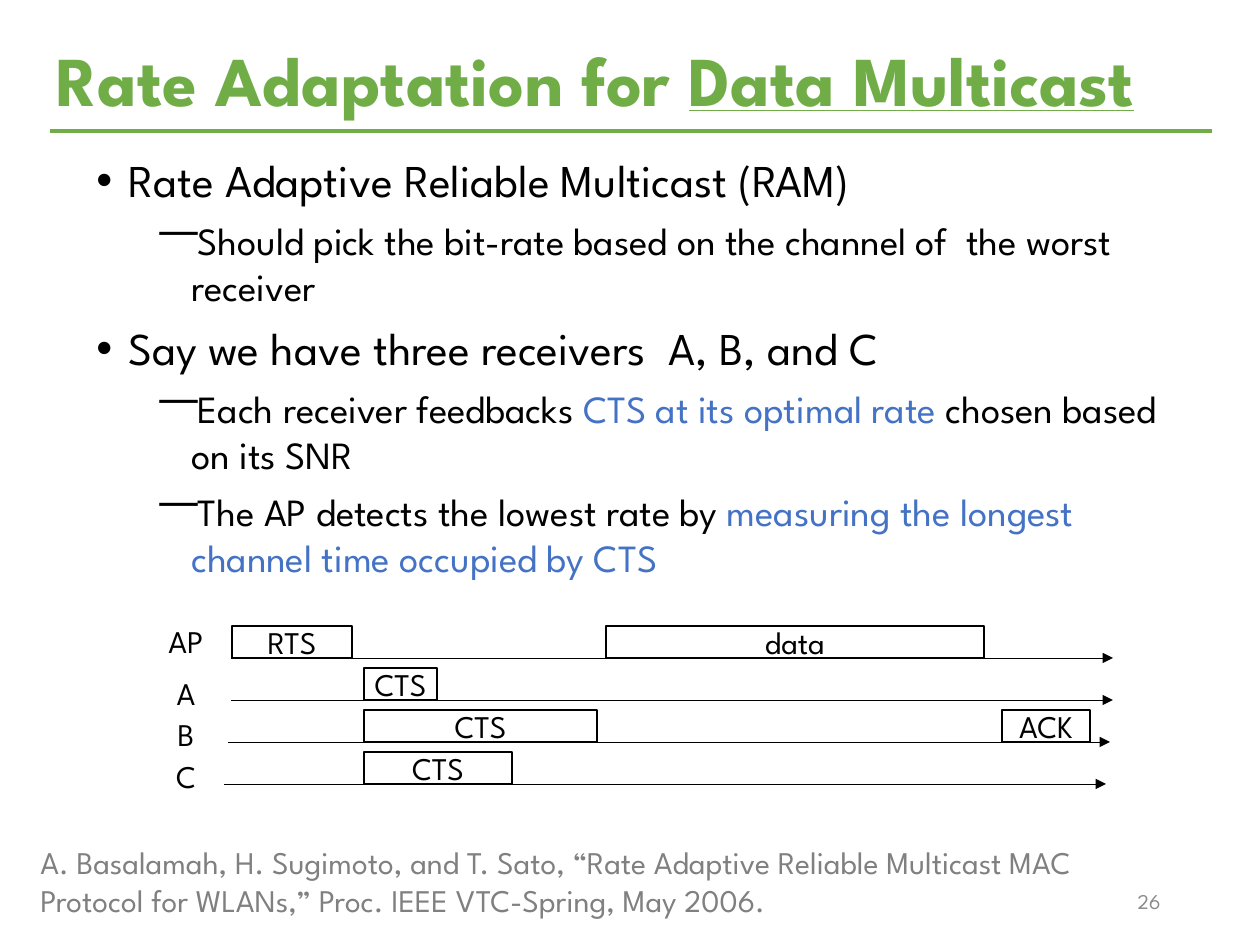
"""Build a slide on rate adaptation for multicast, with its frame timeline."""
import dataclasses

import lxml.etree
import pptx
import pptx.dml.color
import pptx.enum.shapes
import pptx.enum.text
import pptx.oxml.ns
import pptx.util

EMU_PER_INCH = 914400
PX_PER_INCH = 126
ALIGN = pptx.enum.text.PP_ALIGN
ANCHOR = pptx.enum.text.MSO_ANCHOR
qn = pptx.oxml.ns.qn


@dataclasses.dataclass(frozen=True)
class Theme:
    font: str = "League Spartan"
    bullet_font: str = "Arial"
    green: str = "70AD47"
    blue: str = "4472C4"
    black: str = "000000"
    grey: str = "808080"
    light_grey: str = "8C8C8C"
    title: int = 40
    point: int = 26
    detail: int = 22
    label: int = 18
    number: int = 12


THEME = Theme()

POINTS = [
    (0, [("Rate Adaptive Reliable Multicast (RAM)", THEME.black)]),
    (1, [("Should pick the bit-rate based on the channel of  the worst receiver", THEME.black)]),
    (0, [("Say we have three receivers  A, B, and C", THEME.black)]),
    (1, [("Each receiver feedbacks ", THEME.black),
         ("CTS at its optimal rate ", THEME.blue),
         ("chosen based on its SNR", THEME.black)]),
    (1, [("The AP detects the lowest rate by ", THEME.black),
         ("measuring the longest channel time occupied by CTS", THEME.blue)]),
]

FIRST_AXIS, ROW_STEP, AXIS_LENGTH, FRAME_HEIGHT = 658, 42, 882, 32
ROWS = [
    ("AP", 616, 231, [("RTS", 232, 120), ("data", 606, 378)]),
    ("A", 668, 231, [("CTS", 364, 73)]),
    ("B", 709, 228, [("CTS", 364, 233), ("ACK", 1002, 88)]),
    ("C", 751, 224, [("CTS", 364, 148)]),
]
CITATION = (
    "A. Basalamah, H. Sugimoto, and T. Sato, “Rate Adaptive Reliable Multicast MAC "
    "Protocol for WLANs,” Proc. IEEE VTC-Spring, May 2006."
)


def px(length):
    return pptx.util.Emu(round(length * EMU_PER_INCH / PX_PER_INCH))


def rgb(colour):
    return pptx.dml.color.RGBColor.from_string(colour)


def write(para, text, size=THEME.label, colour=THEME.black, bold=None, underline=None,
          align=None):
    span = para.add_run()
    span.text = text
    font = span.font
    font.name, font.size = THEME.font, pptx.util.Pt(size)
    font.bold, font.underline = bold, underline
    font.color.rgb = rgb(colour)
    if align is not None:
        para.alignment = align


def place(shape, left, top, width, height):
    shape.left, shape.top, shape.width, shape.height = map(px, (left, top, width, height))


def add_text_box(page, left, top, width, height, wrap=True, anchor=ANCHOR.TOP):
    box = page.shapes.add_textbox(*map(px, (left, top, width, height)))
    box.text_frame.word_wrap = wrap
    box.text_frame.vertical_anchor = anchor
    return box.text_frame


def add_line(page, start, end, y, colour, weight, arrow=False):
    line = page.shapes.add_connector(
        pptx.enum.shapes.MSO_CONNECTOR.STRAIGHT, px(start), px(y), px(end), px(y))
    line.line.color.rgb = rgb(colour)
    line.line.width = pptx.util.Pt(weight)
    if arrow:
        lxml.etree.SubElement(line.line._get_or_add_ln(), qn("a:tailEnd"), type="triangle")
    lxml.etree.SubElement(line._element.spPr, qn("a:effectLst"))


def add_title(page):
    title = page.shapes.title
    place(title, 44, 37, 1201, 93)
    frame = title.text_frame
    frame.auto_size = pptx.enum.text.MSO_AUTO_SIZE.NONE
    frame.vertical_anchor = ANCHOR.MIDDLE
    para = frame.paragraphs[0]
    para.line_spacing = 0.9
    for text, underline in (("Rate Adaptation for ", None), ("Data Multicast", True)):
        write(para, text, size=THEME.title, colour=THEME.green, bold=True,
              underline=underline, align=ALIGN.LEFT)


def set_bullet(para, character, margin, hanging):
    properties = para._p.get_or_add_pPr()
    properties.set("marL", str(px(margin)))
    properties.set("indent", str(-px(hanging)))
    lxml.etree.SubElement(properties, qn("a:buFont"), typeface=THEME.bullet_font)
    lxml.etree.SubElement(properties, qn("a:buChar"), char=character)


def add_points(page):
    frame = add_text_box(page, 84, 146, 1086, 673)
    for index, (level, spans) in enumerate(POINTS):
        para = frame.add_paragraph() if index else frame.paragraphs[0]
        para.level = level
        para.space_before = pptx.util.Pt(6)
        set_bullet(para, "•⎻"[level], (32, 95)[level], 32)
        for text, colour in spans:
            write(para, text, size=(THEME.point, THEME.detail)[level], colour=colour)


def add_frame_box(page, text, left, top, width):
    box = page.shapes.add_shape(
        pptx.enum.shapes.MSO_SHAPE.RECTANGLE, *map(px, (left, top, width, FRAME_HEIGHT)))
    box.shadow.inherit = False
    box.fill.background()
    box.line.color.rgb = rgb(THEME.black)
    box.line.width = pptx.util.Pt(1)
    frame = box.text_frame
    frame.word_wrap = True
    frame.vertical_anchor = ANCHOR.MIDDLE
    frame.margin_left = frame.margin_right = 0
    write(frame.paragraphs[0], text, align=ALIGN.CENTER)


def add_timeline(page):
    for row, (name, label_top, start, frames) in enumerate(ROWS):
        axis = FIRST_AXIS + row * ROW_STEP
        add_line(page, start, start + AXIS_LENGTH, axis, THEME.black, 0.5, arrow=True)
        label = add_text_box(page, 154, label_top, 64, 50, wrap=False)
        write(label.paragraphs[0], name, align=ALIGN.CENTER)
        for text, left, width in frames:
            add_frame_box(page, text, left, axis - FRAME_HEIGHT, width)


def add_footer(page):
    citation = add_text_box(page, 26, 837, 1111, 89)
    citation.paragraphs[0]._p.get_or_add_pPr().set("marL", str(px(2)))
    write(citation.paragraphs[0], CITATION, colour=THEME.grey)
    number = add_text_box(page, 890, 876, 283, 50, anchor=ANCHOR.MIDDLE)
    write(number.paragraphs[0], "26", size=THEME.number, colour=THEME.light_grey,
          align=ALIGN.RIGHT)


def main():
    deck = pptx.Presentation()
    deck.slide_width, deck.slide_height = px(1260), px(945)
    page = deck.slides.add_slide(deck.slide_layouts.get_by_name("Title Only"))
    add_line(page, 50, 1212, 131, THEME.green, 2.75)
    add_title(page)
    add_points(page)
    add_timeline(page)
    add_footer(page)
    deck.save("out.pptx")


if __name__ == "__main__":
    main()
